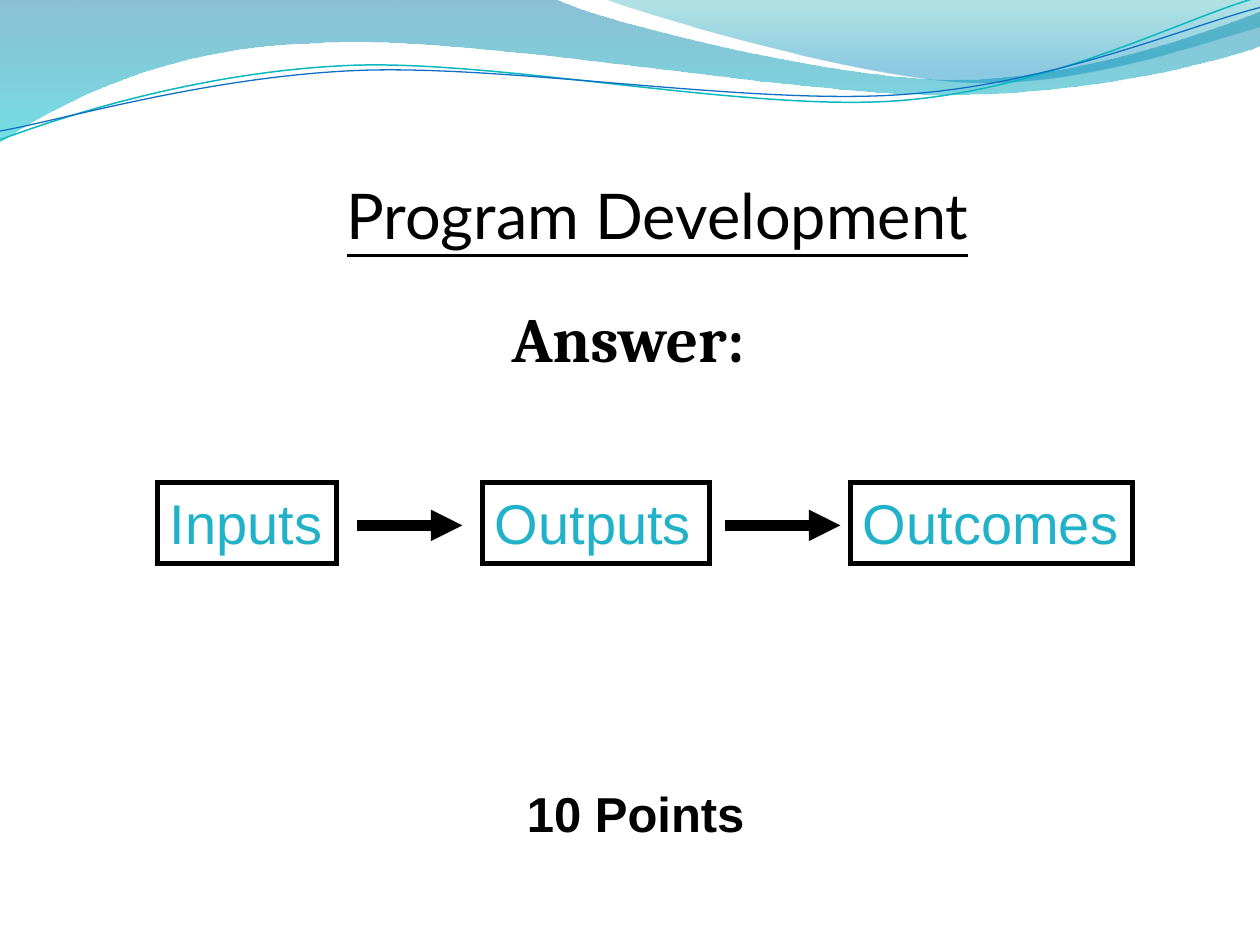
from lxml.etree import SubElement
from pptx import Presentation
from pptx.dml.color import RGBColor
from pptx.enum.shapes import MSO_CONNECTOR, MSO_SHAPE
from pptx.enum.text import MSO_ANCHOR, MSO_AUTO_SIZE, PP_ALIGN
from pptx.oxml.ns import qn
from pptx.util import Inches, Pt

BLACK = RGBColor(0x00, 0x00, 0x00)
WHITE = RGBColor(0xFF, 0xFF, 0xFF)
AQUA = RGBColor(0x21, 0xB2, 0xC9)
DEEP_BLUE = RGBColor(0x00, 0x74, 0xA1)
TURQUOISE = RGBColor(0x00, 0xC6, 0xCF)
TEAL = RGBColor(0x00, 0xA1, 0xA9)
SKY_BLUE = RGBColor(0x00, 0x8B, 0xBF)
LINE_TEAL = RGBColor(0x0A, 0xB8, 0xBF)
LINE_BLUE = RGBColor(0x0F, 0x6F, 0xC6)

BANDS = [
    ([(0, 0), (4.4, -0.01),
      (4.76, 0.17, 6.64, 0.63, 7.58, 0.63), (8.53, 0.63, 9.58, 0.26, 10, 0.09),
      (10.01, 0.36),
      (9.83, 0.44, 8.7, 0.76, 7.46, 0.75), (6.22, 0.75, 3.82, 0.28, 2.57, 0.34),
      (1.29, 0.36, 0.46, 0.83, -0.01, 1.13)],
     [(0, DEEP_BLUE, 45), (1, TURQUOISE, 55)]),
    ([(4.79, -0.01), (5.09, 0.11, 6.82, 0.62, 7.69, 0.65),
      (8.56, 0.69, 9.61, 0.32, 10, 0.21), (10, 0)],
     [(0, TEAL, 30), (0.8, SKY_BLUE, 45)]),
]
STRANDS = [
    ([(0, 1.11), (0.48, 0.93, 1.58, 0.57, 2.77, 0.52),
      (3.95, 0.47, 5.93, 0.89, 7.13, 0.8), (8.33, 0.71, 9.38, 0.15, 9.98, -0.02)],
     LINE_TEAL, 0.85),
    ([(0, 1.04), (0.47, 0.96, 1.64, 0.61, 2.83, 0.56),
      (4.03, 0.51, 5.97, 0.84, 7.17, 0.75), (8.36, 0.67, 9.41, 0.21, 10, 0.06)],
     LINE_BLUE, 0.75),
]


def add_outline(slide, segments, left, top, close):
    """Add a freeform of lines and cubic curves, offset by left and top."""
    points = [(left + Inches(x), top + Inches(y))
              for segment in segments for x, y in zip(segment[::2], segment[1::2])]
    builder = slide.shapes.build_freeform(*points[0])
    builder.add_line_segments(points[1:], close=close)
    shape = builder.convert_to_shape()
    shape.shadow.inherit = False
    lines = iter(list(shape.element.iter(qn("a:lnTo"))))
    for segment in segments[1:]:
        line = next(lines)
        if len(segment) == 6:
            line.tag = qn("a:cubicBezTo")
            for _ in range(2):
                extra = next(lines)
                line.append(extra[0])
                extra.getparent().remove(extra)
    return shape


def add_waves(slide, left, top):
    """Draw the translucent bands and thin strands of the header."""
    for segments, stops in BANDS:
        shape = add_outline(slide, segments, left, top, True)
        shape.line.fill.background()
        shape.fill.gradient()
        shape.fill.gradient_angle = 270
        for stop, (position, color, _) in zip(shape.fill.gradient_stops, stops):
            stop.position = position
            stop.color.rgb = color
        for color_element, stop in zip(shape.element.iter(qn("a:srgbClr")), stops):
            SubElement(color_element, qn("a:alpha"), val=str(stop[2] * 1000))
    for segments, color, width in STRANDS:
        shape = add_outline(slide, segments, left, top, False)
        shape.fill.background()
        shape.line.color.rgb = color
        shape.line.width = Pt(width)


def write_text(shape, text, font_format, color=BLACK, alignment=PP_ALIGN.LEFT, space=0):
    """Write one formatted paragraph into the shape."""
    paragraph = shape.text_frame.paragraphs[0]
    paragraph.alignment = alignment
    paragraph.space_before = Pt(space)
    run = paragraph.add_run()
    run.text = text
    run.font.color.rgb = color
    for name, value in font_format.items():
        setattr(run.font, name, value)
    return paragraph


def format_frame(shape, **frame_format):
    """Apply the given text frame settings."""
    for name, value in frame_format.items():
        setattr(shape.text_frame, name, value)


def place_in_front(shape, left, top, width, height):
    """Move a placeholder to its box, in front of the waves."""
    shape.left, shape.top, shape.width, shape.height = left, top, width, height
    shape.element.getparent().append(shape.element)


def fill_title(slide, left, top, width, height):
    """Place the underlined title."""
    title = slide.shapes.title
    place_in_front(title, left, top, width, height)
    format_frame(title, vertical_anchor=MSO_ANCHOR.BOTTOM, auto_size=MSO_AUTO_SIZE.NONE,
                 margin_left=0, margin_right=0, margin_bottom=0)
    write_text(title, "Program Development",
               {"name": "Lato", "size": Pt(36), "underline": True})


def fill_body(slide, left, top, width, height):
    """Place the answer heading without a bullet."""
    body = slide.placeholders[1]
    place_in_front(body, left, top, width, height)
    format_frame(body, vertical_anchor=MSO_ANCHOR.TOP, auto_size=MSO_AUTO_SIZE.NONE)
    paragraph = write_text(body, "Answer: ", {"name": "Cambria", "size": Pt(36), "bold": True},
                           alignment=PP_ALIGN.CENTER, space=7.2)
    properties = paragraph._p.get_or_add_pPr()
    properties.set("marL", str(Inches(0.3)))
    properties.set("indent", str(Inches(-0.3)))
    SubElement(properties, qn("a:buNone"))


def add_points(slide, left, top, width, height):
    """Add the score below the diagram."""
    box = slide.shapes.add_textbox(left, top, width, height)
    format_frame(box, word_wrap=True, auto_size=MSO_AUTO_SIZE.SHAPE_TO_FIT_TEXT)
    write_text(box, "10 Points", {"name": "Arial", "size": Pt(28), "bold": True},
               alignment=PP_ALIGN.CENTER, space=14)


def add_stage(slide, text, wrap, left, top, width, height):
    """Add one framed stage of the flow."""
    shape = slide.shapes.add_shape(MSO_SHAPE.RECTANGLE, left, top, width, height)
    shape.shadow.inherit = False
    shape.fill.background()
    shape.line.color.rgb = BLACK
    shape.line.width = Pt(3)
    SubElement(shape.line._get_or_add_ln(), qn("a:miter"), lim="800000")
    format_frame(shape, vertical_anchor=MSO_ANCHOR.TOP, word_wrap=wrap,
                 auto_size=MSO_AUTO_SIZE.SHAPE_TO_FIT_TEXT)
    write_text(shape, text, {"name": "Arial", "size": Pt(32)}, AQUA)


def add_arrow(slide, start, end, middle):
    """Add a heavy horizontal arrow."""
    arrow = slide.shapes.add_connector(MSO_CONNECTOR.STRAIGHT, start, middle, end, middle)
    arrow.line.color.rgb = BLACK
    arrow.line.width = Pt(6)
    SubElement(arrow.line._get_or_add_ln(), qn("a:tailEnd"), type="triangle")
    SubElement(arrow.element.spPr, qn("a:effectLst"))


def add_flow(slide, left, top, height):
    """Lay out the three stages and the arrows between them."""
    for text, wrap, offset, width in (("Inputs", False, 0, 1.42),
                                      ("Outputs", True, 2.58, 1.8),
                                      ("Outcomes", False, 5.5, 2.24)):
        add_stage(slide, text, wrap, left + Inches(offset), top, Inches(width), height)
    for start, end in ((1.58, 2.42), (4.5, 5.42)):
        add_arrow(slide, left + Inches(start), left + Inches(end), top + Inches(0.34))


def main():
    """Build and save the slide."""
    presentation = Presentation()
    presentation.slide_width = Inches(10)
    presentation.slide_height = Inches(7.5)
    slide = presentation.slides.add_slide(presentation.slide_layouts[1])
    slide.background.fill.solid()
    slide.background.fill.fore_color.rgb = WHITE
    add_waves(slide, Inches(0), Inches(0))
    fill_title(slide, Inches(2.75), Inches(0.75), Inches(7.25), Inches(1.25))
    fill_body(slide, Inches(0.75), Inches(2.33), Inches(8.58), Inches(2.92))
    add_points(slide, Inches(3.42), Inches(6.17), Inches(3.25), Inches(0.57))
    add_flow(slide, Inches(1.25), Inches(3.83), Inches(0.64))
    presentation.save("out.pptx")


if __name__ == "__main__":
    main()
